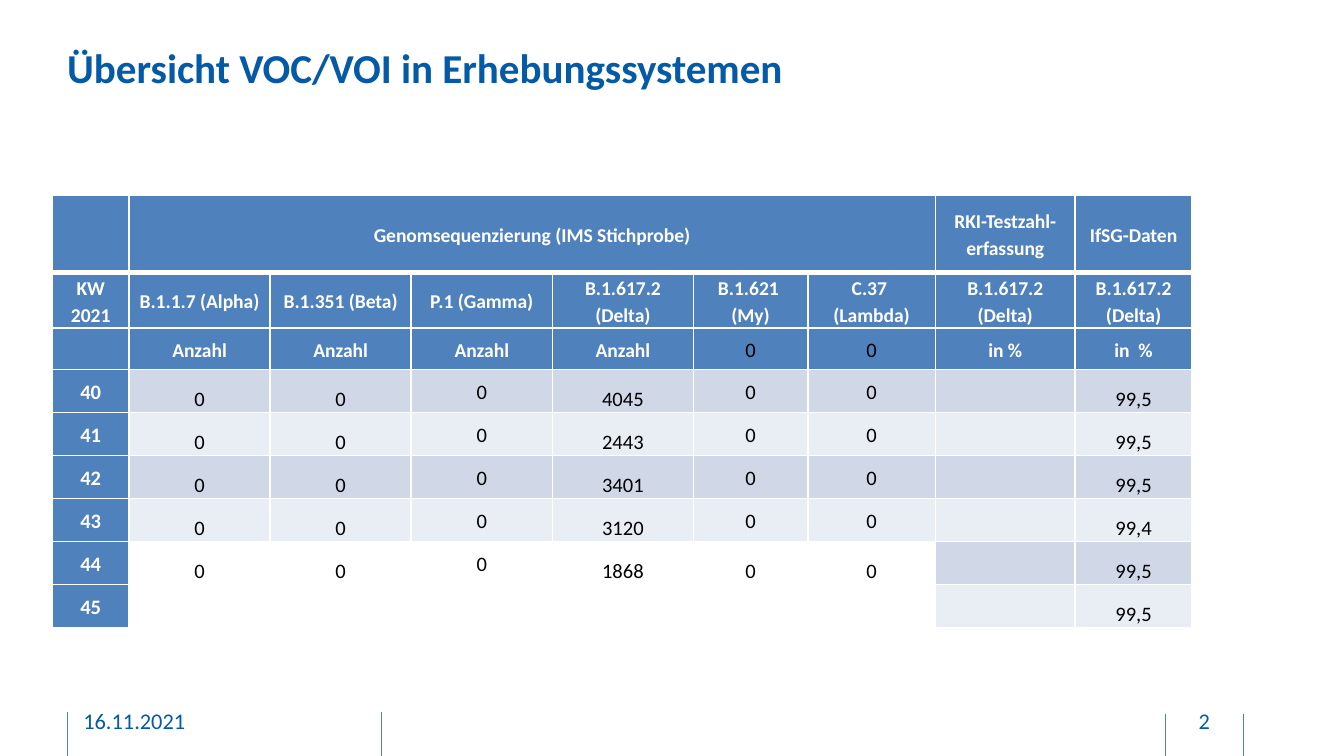
from lxml import etree
from pptx import Presentation
from pptx.dml.color import RGBColor
from pptx.enum import shapes, text
from pptx.oxml import ns
from pptx.util import Inches, Pt

COLORS = {"title": "045AA6", "header": "4F81BD", "dark": "D0D8E8",
          "light": "E9EDF4", "white": "FFFFFF", "black": "000000"}
MIDDLE, BOTTOM = text.MSO_ANCHOR.MIDDLE, text.MSO_ANCHOR.BOTTOM
CENTER, LEFT = text.PP_ALIGN.CENTER, text.PP_ALIGN.LEFT


def style_text(frame, size, color, bold=False, align=LEFT, spacing=None):
    for para in frame.paragraphs:
        para.alignment = align
        para.line_spacing = spacing
        for span in para.runs:
            span.font.name = "Calibri"
            span.font.size = Pt(size)
            span.font.bold = bold
            span.font.color.rgb = RGBColor.from_string(COLORS[color])


def add_borders(cell, bottom_width):
    """Draw white cell borders; they must precede the fill in the cell XML."""
    properties = cell._tc.get_or_add_tcPr()
    for place, side in enumerate(("lnL", "lnR", "lnT", "lnB")):
        width = bottom_width if side == "lnB" else 1
        line = etree.Element(ns.qn(f"a:{side}"), w=str(Pt(width)))
        fill = etree.SubElement(line, ns.qn("a:solidFill"))
        etree.SubElement(fill, ns.qn("a:srgbClr"), val=COLORS["white"])
        properties.insert(place, line)


deck = Presentation()
deck.slide_width = Inches(10)
deck.slide_height = deck.slide_width * 9 // 16
page = deck.slides.add_slide(deck.slide_layouts[5])

# Footer
for x, top, bottom in [(0.5, 5.3, 5.63), (2.84, 5.3, 5.64),
                       (8.67, 5.31, 5.65), (9.25, 5.31, 5.65)]:
    divider = page.shapes.add_connector(
        shapes.MSO_CONNECTOR.STRAIGHT, Inches(x), Inches(top), Inches(x), Inches(bottom))
    divider.line.color.rgb = RGBColor.from_string(COLORS["header"])
    divider.line.width = Pt(0.5)
    etree.SubElement(divider._element.spPr, ns.qn("a:effectLst"))

for words, x, width, align in [("16.11.2021", 0.62, 2.03, LEFT), ("2", 8.69, 0.54, CENTER)]:
    box = page.shapes.add_textbox(Inches(x), Inches(5.21), Inches(width), Inches(0.3))
    frame = box.text_frame
    frame.word_wrap = True
    frame.margin_left = frame.margin_right = 0
    frame.vertical_anchor = MIDDLE
    frame.text = words
    style_text(frame, 12, "title", align=align)

# Title
title = page.shapes.title
title.left, title.top = Inches(0.5), Inches(0.11)
title.width, title.height = Inches(8.73), Inches(0.78)
frame = title.text_frame
frame.margin_left = frame.margin_right = frame.margin_top = frame.margin_bottom = 0
frame.vertical_anchor = MIDDLE
frame.text = "Übersicht VOC/VOI in Erhebungssystemen"
style_text(frame, 22, "title", bold=True)

# Table
delta = "B.1.617.2 (Delta)"
header_rows = [
    ["", "Genomsequenzierung (IMS Stichprobe)", "", "", "", "", "",
     "RKI-Testzahl-erfassung", "IfSG-Daten"],
    ["KW 2021", "B.1.1.7 (Alpha)", "B.1.351 (Beta)", "P.1 (Gamma)", delta,
     "B.1.621 \v(My)", "C.37 \v(Lambda)", delta, delta],
    ["", "Anzahl", "Anzahl", "Anzahl", "Anzahl", "0", "0", "in %", "in  %"],
]
weeks = [("40", "4045", "99,5"), ("41", "2443", "99,5"), ("42", "3401", "99,5"),
         ("43", "3120", "99,4"), ("44", "1868", "99,5"), ("45", "", "99,5")]
rows = list(header_rows)
for week, delta_count, delta_share in weeks:
    other = "0" if delta_count else ""
    rows.append([week, other, other, other, delta_count, other, other, "", delta_share])

column_widths = [0.57, 1.05, 1.05, 1.05, 1.05, 0.85, 0.95, 1.04, 0.87]
row_heights = [0.58, 0.41, 0.31] + [0.32] * len(weeks)
table = page.shapes.add_table(
    len(rows), len(column_widths), Inches(0.39), Inches(1.45),
    Inches(sum(column_widths)), Inches(sum(row_heights))).table
table.horz_banding = table.first_row = False
for column, width in zip(table.columns, column_widths):
    column.width = Inches(width)
for row, height in zip(table.rows, row_heights):
    row.height = Inches(height)
table.cell(0, 1).merge(table.cell(0, 6))

for r, values in enumerate(rows):
    for c, value in enumerate(values):
        cell = table.cell(r, c)
        is_header = r < len(header_rows) or c == 0
        is_number = c in (4, 8) and not is_header
        is_white = rows[r][0] in ("44", "45") and 1 <= c <= 6
        if is_white:
            cell.fill.background()
        else:
            band = "header" if is_header else "dark" if r % 2 else "light"
            cell.fill.solid()
            cell.fill.fore_color.rgb = RGBColor.from_string(COLORS[band])
        add_borders(cell, bottom_width=3 if r == 0 else 1)

        at_bottom = c in (1, 2, 4, 8) or (is_white and c in (5, 6))
        cell.vertical_anchor = BOTTOM if at_bottom and not is_header else MIDDLE
        cell.margin_left = cell.margin_right = Inches(0.01 if is_number else 0.05)
        cell.margin_top = Inches(0.01 if is_number else 0)
        cell.margin_bottom = 0
        cell.text_frame.text = value
        bold = is_header and value != "0"
        size = 10.5 if r < len(header_rows) and bold else 11
        style_text(cell.text_frame, size, "white" if bold else "black", bold,
                   CENTER, None if is_number else 1.15)

deck.save("out.pptx")
